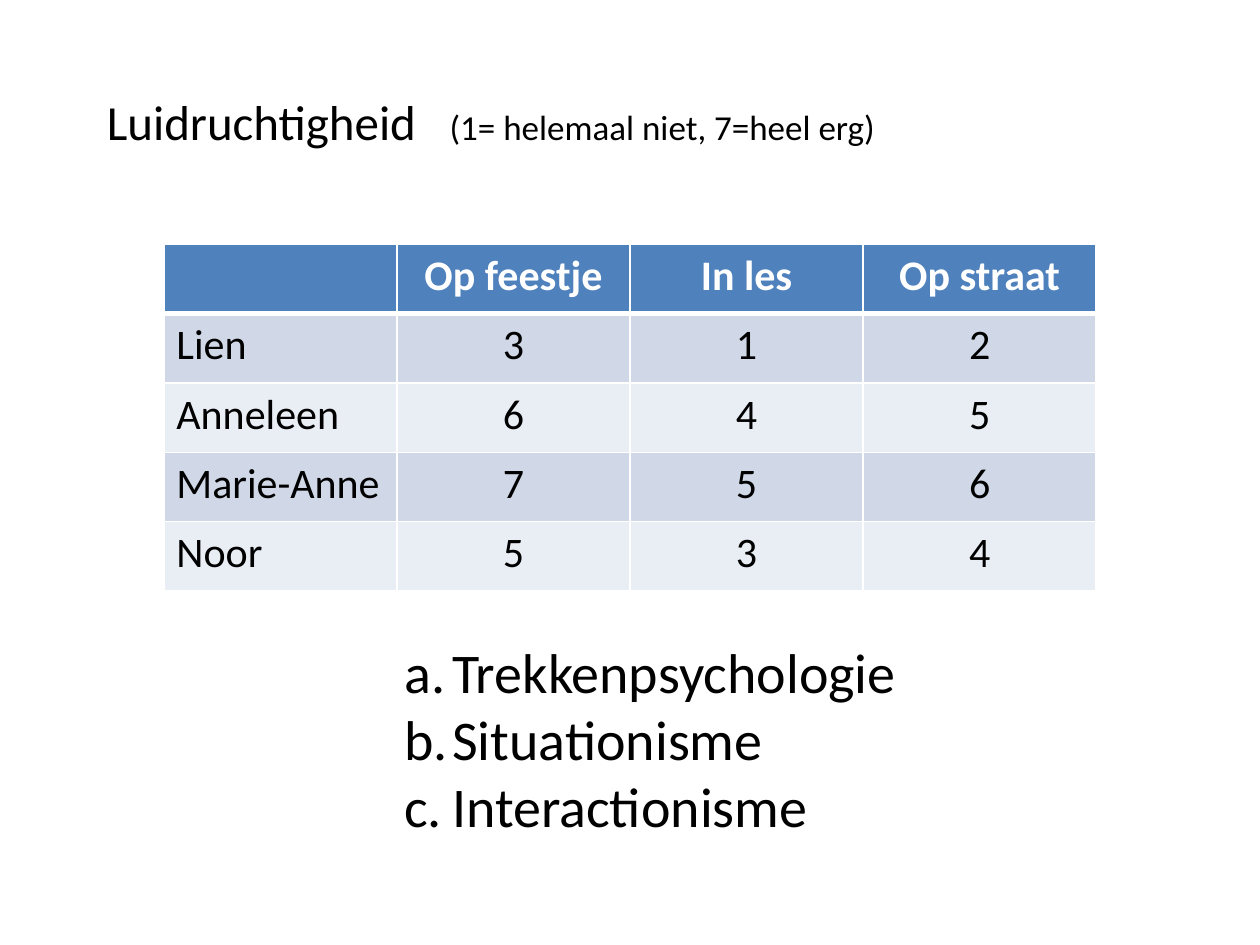
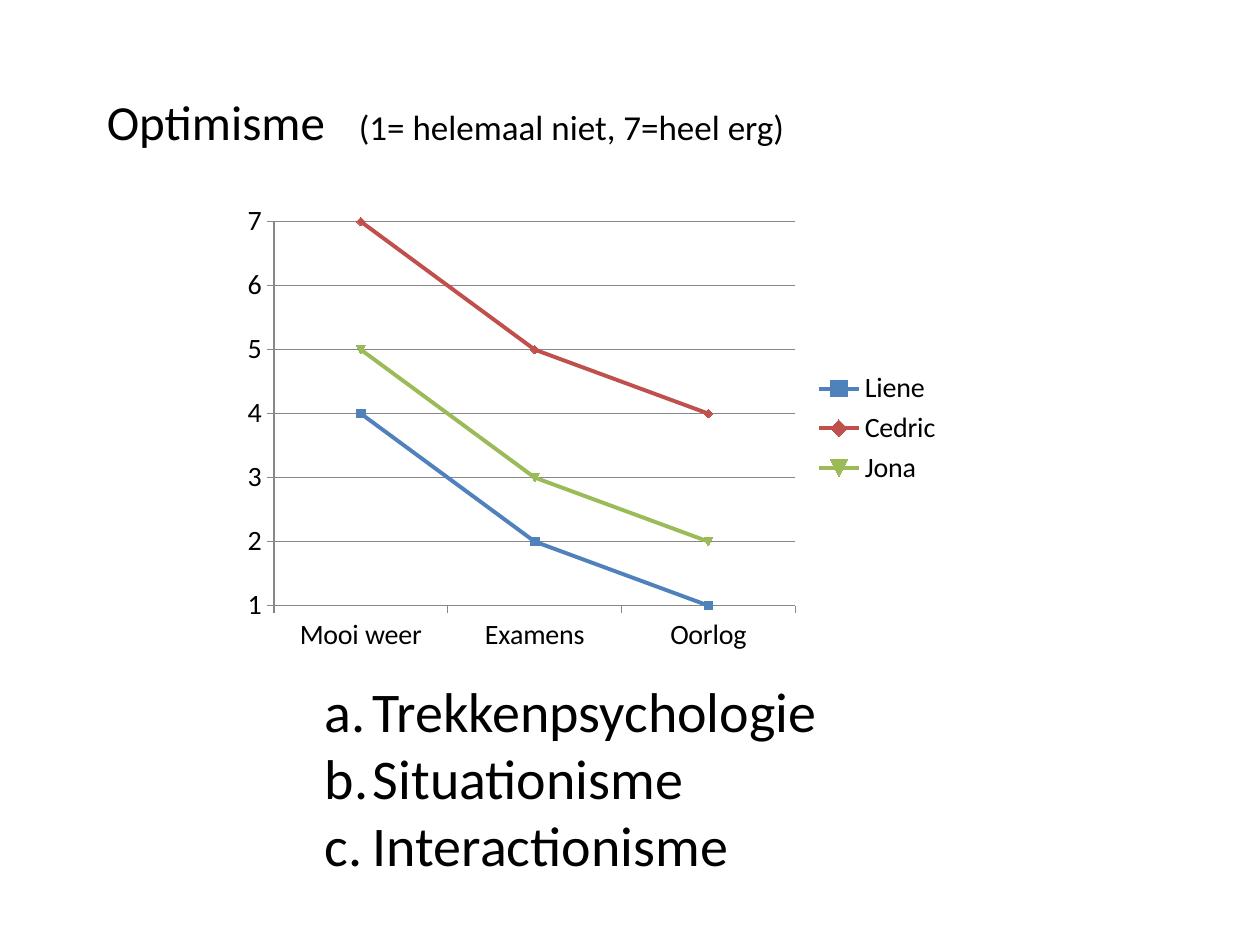
import pptx
import pptx.chart.data
import pptx.dml.color
import pptx.enum.chart
import pptx.enum.text
import pptx.oxml
import pptx.oxml.ns
import pptx.util
from dataclasses import dataclass
from lxml import etree

Inches = pptx.util.Inches
Pt = pptx.util.Pt

SCALE = "(1= helemaal niet, 7=heel erg)"
ANSWERS = ["Trekkenpsychologie", "Situationisme", "Interactionisme"]

LOUDNESS = {
    "trait": "Luidruchtigheid",
    "scale_at": 2.72,
    "answers_at": (3.11, 5.01),
    "rows": [
        ("", "Op feestje", "In les", "Op straat"),
        ("Lien", 3, 1, 2),
        ("Anneleen", 6, 4, 5),
        ("Marie-Anne", 7, 5, 6),
        ("Noor", 5, 3, 4),
    ],
}
OPTIMISM = {
    "trait": "Optimisme",
    "scale_at": 2.0,
    "answers_at": (2.48, 5.32),
    "situations": ["Mooi weer", "Examens", "Oorlog"],
    "people": {"Liene": (4, 2, 1), "Cedric": (7, 5, 4), "Jona": (5, 3, 2)},
}


@dataclass(frozen=True)
class Theme:
    font: str = "Calibri"
    text: str = "000000"
    white: str = "FFFFFF"
    header: str = "4F81BD"
    bands: tuple = ("D0D8E8", "E9EDF4")
    series: tuple = ("4F81BD", "C0504D", "9BBB59")
    grid: str = "878787"
    trait_size: int = 28
    scale_size: int = 20
    answer_size: int = 32
    table_size: int = 24
    chart_size: int = 16


THEME = Theme()


def rgb(code):
    return pptx.dml.color.RGBColor.from_string(code)


def set_font(font, size, color=THEME.text, bold=False):
    font.name = THEME.font
    font.size = Pt(size)
    font.bold = bold
    font.color.rgb = rgb(color)


def sub(parent, tag, **attributes):
    return etree.SubElement(parent, pptx.oxml.ns.qn(tag), **attributes)


def add_text_frame(slide, left, top, width, height):
    box = slide.shapes.add_textbox(Inches(left), Inches(top), Inches(width), Inches(height))
    box.text_frame.word_wrap = True
    box.text_frame.auto_size = pptx.enum.text.MSO_AUTO_SIZE.SHAPE_TO_FIT_TEXT
    return box.text_frame


def add_heading(slide, trait, scale_at):
    """Write the trait and, at a tab stop, its rating scale."""
    heading = add_text_frame(slide, 0.75, 0.68, 6.46, 0.57).paragraphs[0]
    stops = sub(heading._p.get_or_add_pPr(), "a:tabLst")
    sub(stops, "a:tab", pos=str(Inches(scale_at)), algn="l")
    for wording, size in ((trait + "\t", THEME.trait_size), (SCALE, THEME.scale_size)):
        run = heading.add_run()
        run.text = wording
        set_font(run.font, size)


def add_answers(slide, left, top):
    frame = add_text_frame(slide, left, top, 5.12, 1.72)
    frame.text = "\n".join(ANSWERS)
    indent = Inches(0.38)
    for answer in frame.paragraphs:
        set_font(answer.runs[0].font, THEME.answer_size)
        properties = answer._p.get_or_add_pPr()
        properties.set("marL", str(indent))
        properties.set("indent", str(-indent))
        sub(properties, "a:buFont", typeface="+mj-lt")
        sub(properties, "a:buAutoNum", type="alphaLcPeriod")


def add_borders(cell, top, bottom):
    properties = cell._tc.get_or_add_tcPr()
    for side, width in (("L", 1), ("R", 1), ("T", top), ("B", bottom)):
        line = sub(properties, "a:ln" + side, w=str(Pt(width)))
        sub(sub(line, "a:solidFill"), "a:srgbClr", val=THEME.white)


def add_ratings_table(slide, rows):
    row_height, column_width = 0.55, 1.85
    table = slide.shapes.add_table(
        len(rows), len(rows[0]), Inches(1.3), Inches(1.94),
        Inches(column_width * len(rows[0])), Inches(row_height * len(rows))).table
    for r, row in enumerate(rows):
        is_header = r == 0
        fill = THEME.header if is_header else THEME.bands[(r - 1) % 2]
        color = THEME.white if is_header else THEME.text
        for c, rating in enumerate(row):
            cell = table.cell(r, c)
            add_borders(cell, top=3 if r == 1 else 1, bottom=3 if is_header else 1)
            cell.fill.solid()
            cell.fill.fore_color.rgb = rgb(fill)
            cell.text_frame.text = str(rating)
            line = cell.text_frame.paragraphs[0]
            set_font(line.font, THEME.table_size, color, is_header)
            for run in line.runs:
                set_font(run.font, THEME.table_size, color, is_header)
            if c:
                line.alignment = pptx.enum.text.PP_ALIGN.CENTER


def add_ratings_chart(slide, situations, people):
    ratings = pptx.chart.data.CategoryChartData()
    ratings.categories = situations
    for person, scores in people.items():
        ratings.add_series(person, scores)
    chart = slide.shapes.add_chart(
        pptx.enum.chart.XL_CHART_TYPE.LINE_MARKERS, Inches(1.85), Inches(1.55),
        Inches(5.73), Inches(3.7), ratings).chart
    set_font(chart.font, THEME.chart_size)
    chart.has_title = False
    chart.has_legend = True
    chart.legend.position = pptx.enum.chart.XL_LEGEND_POSITION.RIGHT
    chart.legend.include_in_layout = False

    chart.plots[0].vary_by_categories = False
    for person, color in zip(chart.plots[0].series, THEME.series):
        person.smooth = False
        person.format.line.color.rgb = rgb(color)
        person.format.line.width = Pt(2.25)

    scale = chart.value_axis
    scale.minimum_scale, scale.maximum_scale, scale.major_unit = 1, 7, 1
    scale.has_major_gridlines = True
    for line in (scale.format.line, scale.major_gridlines.format.line,
                 chart.category_axis.format.line):
        line.color.rgb = rgb(THEME.grid)
        line.width = Pt(0.75)
    for axis in (scale, chart.category_axis):
        axis.major_tick_mark = pptx.enum.chart.XL_TICK_MARK.OUTSIDE


def add_question(deck, question):
    """Add a slide with what all questions share: heading and answers."""
    slide = deck.slides.add_slide(deck.slide_layouts[6])
    add_heading(slide, question["trait"], question["scale_at"])
    add_answers(slide, *question["answers_at"])
    return slide


def main():
    deck = pptx.Presentation()
    deck.slide_width, deck.slide_height = Inches(10), Inches(7.5)
    add_ratings_table(add_question(deck, LOUDNESS), LOUDNESS["rows"])
    add_ratings_chart(add_question(deck, OPTIMISM), OPTIMISM["situations"], OPTIMISM["people"])
    deck.save("out.pptx")


if __name__ == "__main__":
    main()
